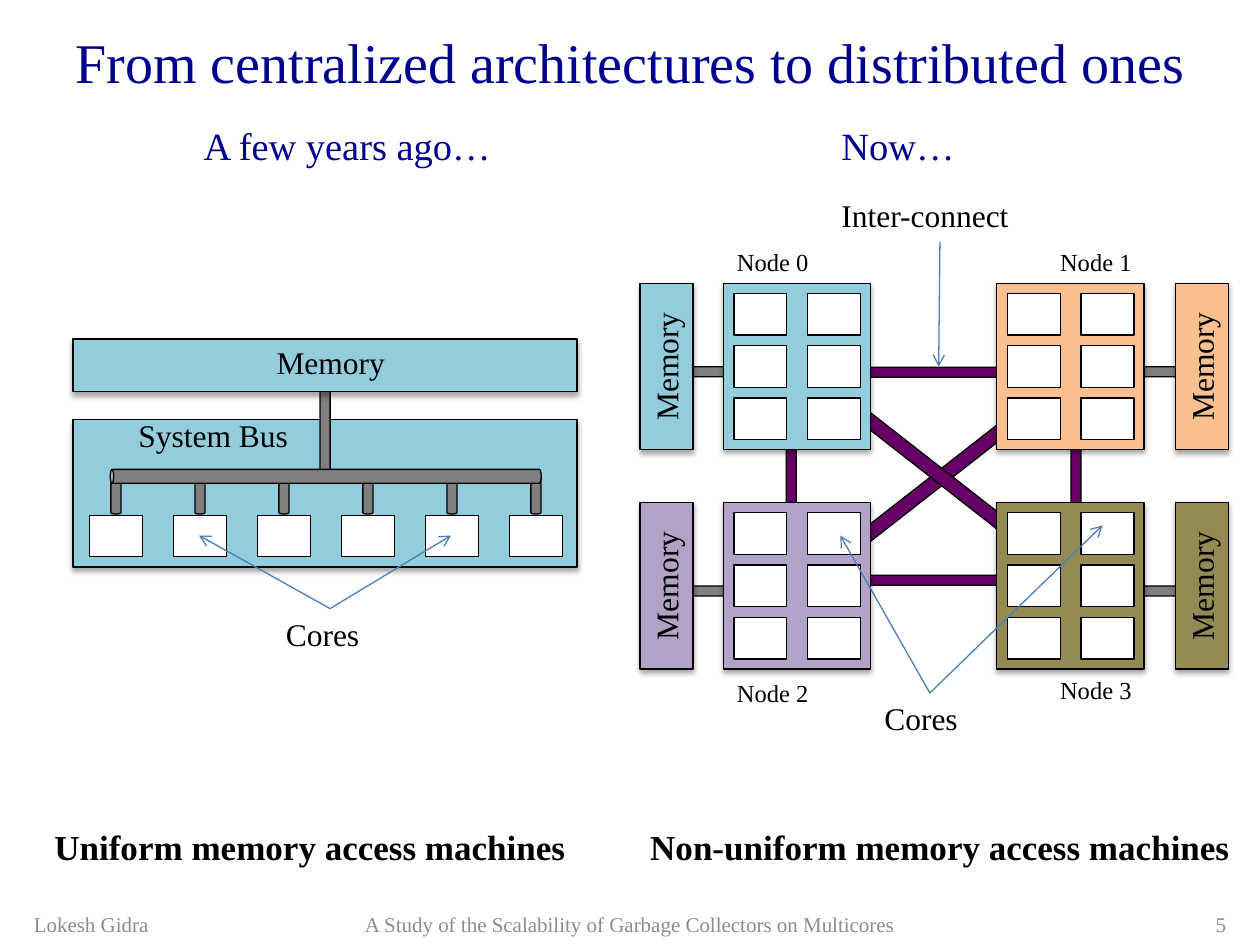
import pptx
import pptx.util
import pptx.dml.color
import pptx.enum.shapes
import pptx.enum.text
import pptx.oxml
import pptx.oxml.ns
from lxml import etree

Inches, Pt = pptx.util.Inches, pptx.util.Pt
SHAPE = pptx.enum.shapes.MSO_SHAPE
ALIGN = pptx.enum.text.PP_ALIGN
ANCHOR = pptx.enum.text.MSO_ANCHOR
qn = pptx.oxml.ns.qn

THEME = {
    "font": "Times New Roman",
    "heading": "000090", "text": "000000", "footer": "8C8C8C",
    "line": "000000", "arrow": "4B7EBC", "core": "FFFFFF",
    "uma": "93CDDD", "bus": "808080", "link": "660066",
    "title_size": 32, "era_size": 22, "caption_size": 20,
    "label_size": 18, "node_size": 14, "footer_size": 12,
    "line_width": 0.75,
}

# Text: words, box (left, top, width, height), alignment
TITLE = ("From centralized architectures to distributed ones", (0.17, 0.17, 9.67, 0.63), "c")
FOOTERS = [
    ("Lokesh Gidra", (0.17, 7.17, 2.33, 0.33), "l"),
    ("A Study of the Scalability of Garbage Collectors on Multicores", (2.5, 7.17, 5, 0.33), "c"),
    ("5", (7.5, 7.17, 2.33, 0.33), "r"),
]
ERAS = [
    ("A few years ago…", (0.92, 0.92, 3.67, 0.47), "c"),
    ("Now…", (6.58, 0.92, 1.11, 0.47), "l"),
]
CAPTIONS = [
    ("Uniform memory access machines", (0, 6.5, 4.92, 0.44), "c"),
    ("Non-uniform memory access machines", (4.92, 6.5, 5.08, 0.44), "c"),
]
LABELS = [
    ("Memory", (0.75, 2.67, 3.75, 0.4), "c"),
    ("System Bus", (1, 3.25, 1.62, 0.4), "l"),
    ("Cores", (2.17, 4.83, 0.92, 0.4), "l"),
    ("Inter-connect", (6.58, 1.51, 1.75, 0.4), "l"),
    ("Cores", (6.92, 5.5, 0.92, 0.4), "l"),
]

# Nodes: name, left, top, colour, label top
NODES = [
    ("Node 0", 5.74, 2.25, "93CDDD", 1.91),
    ("Node 1", 7.91, 2.25, "FAC090", 1.91),
    ("Node 2", 5.74, 3.99, "B3A2C7", 5.33),
    ("Node 3", 7.91, 3.99, "948A54", 5.31),
]
NODE_W, NODE_H = 1.17, 1.32
CORE_W, CORE_H = 0.42, 0.33
MEMORY_W = 0.42

# Interconnect links: box, rotation
LINKS = [
    ((7.4, 2.41, 0.11, 2.78), 52),
    ((7.36, 2.35, 0.11, 2.78), 308),
    ((7.41, 3.98, 0.08, 1.25), 270),
    ((8.5, 3.49, 0.08, 0.74), 0),
    ((6.24, 3.41, 0.08, 0.74), 0),
    ((7.41, 2.33, 0.08, 1.25), 270),
]
# Pointers: start, end
POINTERS = [
    ((7.46, 1.92), (7.45, 2.91)),
    ((7.38, 5.5), (6.67, 4.25)),
    ((7.38, 5.5), (8.75, 4.17)),
    ((2.62, 4.83), (1.58, 4.25)),
    ((2.62, 4.83), (3.58, 4.25)),
]

prs = pptx.Presentation()
prs.slide_width, prs.slide_height = Inches(10), Inches(7.5)
s = prs.slides.add_slide(prs.slide_layouts[6])


def rgb(value):
    return pptx.dml.color.RGBColor.from_string(value)


def add_text(words, box, align, size, color="text", bold=False, middle=False, rotation=0):
    sp = s.shapes.add_textbox(*map(Inches, box))
    sp.rotation = rotation
    tf = sp.text_frame
    tf.word_wrap = True
    tf.vertical_anchor = ANCHOR.MIDDLE if middle else ANCHOR.TOP
    tf.text = words
    p = tf.paragraphs[0]
    p.alignment = {"l": ALIGN.LEFT, "c": ALIGN.CENTER, "r": ALIGN.RIGHT}[align]
    font = p.runs[0].font
    font.name, font.size, font.bold = THEME["font"], Pt(THEME[size]), bold
    font.color.rgb = rgb(THEME[color])


def add_part(kind, box, fill, rotation=0, shadow=False):
    sp = s.shapes.add_shape(kind, *map(Inches, box))
    sp.rotation = rotation
    sp.shadow.inherit = False
    sp.fill.solid()
    sp.fill.fore_color.rgb = rgb(fill)
    sp.line.color.rgb = rgb(THEME["line"])
    sp.line.width = Pt(THEME["line_width"])
    if shadow:
        effects = sp._element.spPr.find(qn("a:effectLst"))
        outer = etree.SubElement(effects, qn("a:outerShdw"), blurRad=str(Pt(3.1)),
                                 dist=str(Pt(1.8)), dir="5400000", rotWithShape="0")
        black = etree.SubElement(outer, qn("a:srgbClr"), val="000000")
        etree.SubElement(black, qn("a:alpha"), val="35000")


def add_block(box, fill, rotation=0):
    add_part(SHAPE.RECTANGLE, box, fill, rotation, shadow=True)


def add_core(left, top):
    add_part(SHAPE.RECTANGLE, (left, top, CORE_W, CORE_H), THEME["core"])


def add_pipe(box, color, rotation=0):
    add_part(SHAPE.CAN, box, THEME[color], rotation)


def add_pointer(start, end):
    line = s.shapes.add_connector(pptx.enum.shapes.MSO_CONNECTOR.STRAIGHT,
                                  *map(Inches, start + end))
    line.line.color.rgb = rgb(THEME["arrow"])
    line.line.width = Pt(THEME["line_width"])
    etree.SubElement(line.line._get_or_add_ln(), qn("a:tailEnd"), type="arrow")
    etree.SubElement(line._element.spPr, qn("a:effectLst"))


def add_node(name, left, top, fill, label_top):
    on_left = left < 7
    middle = top + NODE_H / 2
    # Bus to memory
    bus_x = 5.61 if on_left else 9.21
    add_pipe((bus_x - 0.04, middle - 0.25, 0.08, 0.58), "bus", 270)
    # Node with two columns and three rows of cores
    add_block((left, top, NODE_W, NODE_H), fill)
    for row in range(3):
        for col in range(2):
            add_core(left + 0.085 + 0.585 * col, top + 0.08 + 0.415 * row)
    # Memory bank, turned upright
    bank_x = 5.29 if on_left else 9.54
    add_block((bank_x - NODE_H / 2, middle - MEMORY_W / 2, NODE_H, MEMORY_W), fill, 270)
    add_text("Memory", (bank_x - 0.67, middle - 0.2, 1.33, 0.4), "c", "label_size", rotation=270)
    add_text(name, (5.75 if on_left else 8.08, label_top, 1, 0.34),
             "l" if on_left else "r", "node_size")


# Title and footer
add_text(*TITLE, "title_size", "heading", middle=True)
for footer in FOOTERS:
    add_text(*footer, "footer_size", "footer", middle=True)

# Uniform machine: processor, cores on a shared bus, memory
add_block((0.58, 3.33, 4, 1.17), THEME["uma"])
for i in range(6):
    core_left = 0.71 + i * 2 / 3
    add_core(core_left, 4.09)
    add_pipe((core_left + 0.17, 3.75, 0.08, 0.33), "bus")
add_pipe((2.54, 2.99, 0.08, 0.76), "bus")
add_block((0.58, 2.69, 4, 0.42), THEME["uma"])
add_pipe((2.53, 2.07, 0.11, 3.42), "bus", 270)

# Non-uniform machine: links behind the nodes
for box, rotation in LINKS:
    add_pipe(box, "link", rotation)
for node in NODES:
    add_node(*node)

# Headings, labels and pointers
for era in ERAS:
    add_text(*era, "era_size", "heading")
for caption in CAPTIONS:
    add_text(*caption, "caption_size", bold=True)
for label in LABELS:
    add_text(*label, "label_size")
for pointer in POINTERS:
    add_pointer(*pointer)

prs.save("out.pptx")
